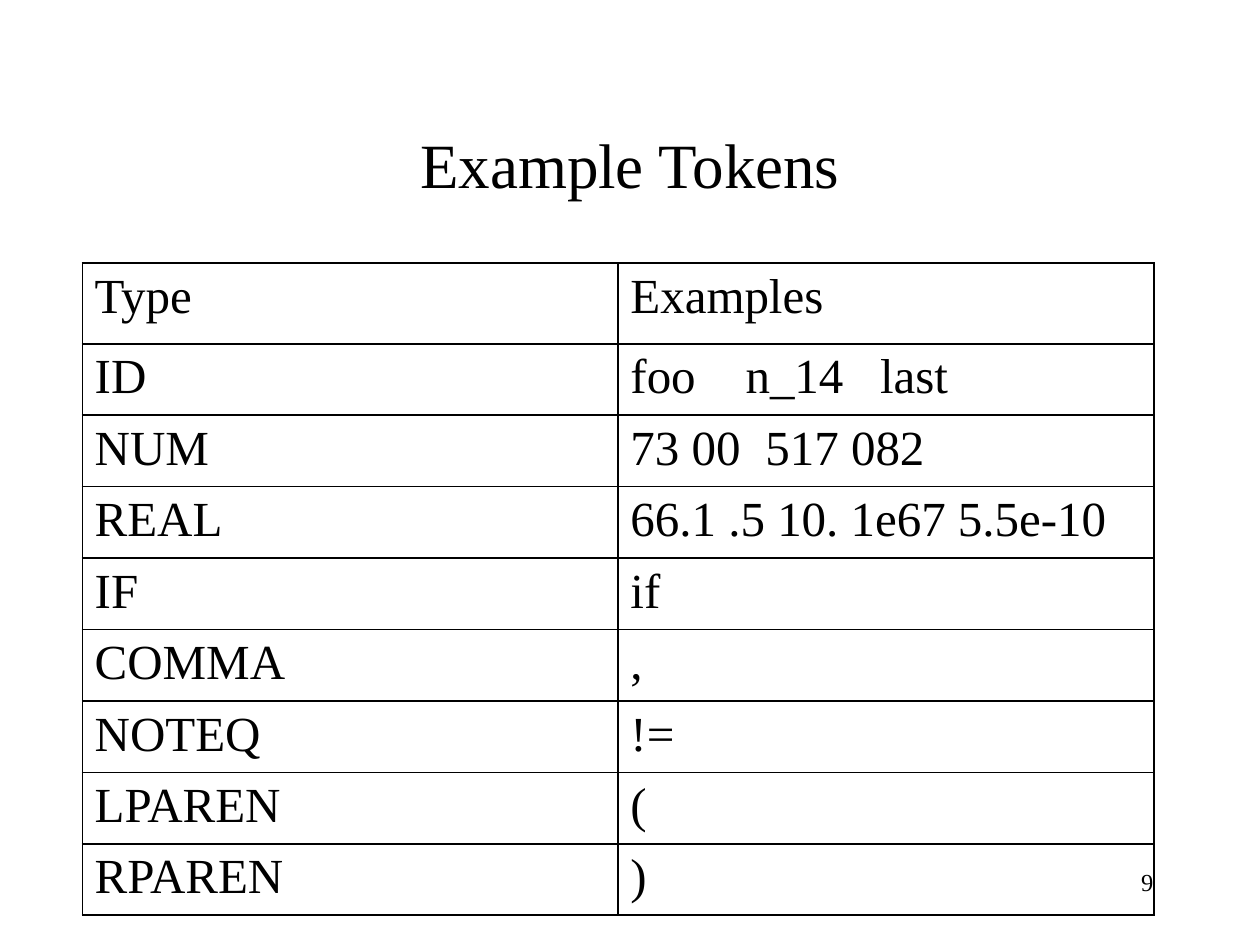
from dataclasses import dataclass

from lxml import etree
from pptx import Presentation
from pptx.dml.color import RGBColor
from pptx.enum.text import MSO_ANCHOR, PP_ALIGN
from pptx.oxml.ns import qn
from pptx.util import Cm, Pt

TITLE_ONLY = 5
CENTER, LEFT, RIGHT = PP_ALIGN.CENTER, PP_ALIGN.LEFT, PP_ALIGN.RIGHT
MIDDLE, TOP = MSO_ANCHOR.MIDDLE, MSO_ANCHOR.TOP
FONT = "Times New Roman"
BLACK = "000000"
HEADER_HEIGHT, TOKEN_HEIGHT = Cm(1.63), Cm(1.44)
COLUMN_WIDTH = Cm(10.8)


@dataclass(frozen=True)
class TokenRow:
    kind: str
    examples: str
    tabs: tuple[float, ...] = ()


TOKENS = [
    TokenRow("Type", "Examples"),
    TokenRow("ID", "foo\tn_14\tlast", (2.32, 5.03)),
    TokenRow("NUM", "73 00\t517 082", (2.72,)),
    TokenRow("REAL", "66.1 .5 10. 1e67 5.5e-10"),
    TokenRow("IF", "if"),
    TokenRow("COMMA", ","),
    TokenRow("NOTEQ", "!="),
    TokenRow("LPAREN", "("),
    TokenRow("RPAREN", ")"),
]


def color(value: str) -> RGBColor:
    return RGBColor.from_string(value)


def write(paragraph, text: str, size: int, align) -> None:
    paragraph.alignment = align
    run = paragraph.add_run()
    run.text = text
    run.font.size = Pt(size)
    run.font.name = FONT
    run.font.bold = False
    run.font.color.rgb = color(BLACK)


def add_tabs(paragraph, stops: tuple[float, ...]) -> None:
    tab_list = etree.SubElement(paragraph._p.get_or_add_pPr(), qn("a:tabLst"))
    for stop in stops:
        etree.SubElement(tab_list, qn("a:tab"), pos=str(int(Cm(stop))), algn="l")


def add_borders(cell) -> None:
    properties = cell._tc.get_or_add_tcPr()
    for position, side in enumerate(("lnL", "lnR", "lnT", "lnB")):
        line = etree.Element(qn(f"a:{side}"), w=str(int(Pt(1))))
        fill = etree.SubElement(line, qn("a:solidFill"))
        etree.SubElement(fill, qn("a:srgbClr"), val=BLACK)
        properties.insert(position, line)


def fill_cell(cell, text: str, tabs: tuple[float, ...] = ()) -> None:
    cell.fill.background()
    cell.vertical_anchor = TOP
    cell.margin_left = cell.margin_right = Cm(0.25)
    cell.margin_top = cell.margin_bottom = Cm(0.13)
    add_borders(cell)
    paragraph = cell.text_frame.paragraphs[0]
    write(paragraph, text, 28, LEFT)
    paragraph.space_before = Pt(5.6)
    if tabs:
        add_tabs(paragraph, tabs)


def add_title(slide, text: str) -> None:
    title = slide.shapes.title
    title.left, title.top = Cm(1.9), Cm(1.7)
    title.width, title.height = Cm(21.6), Cm(3.18)
    title.text_frame.vertical_anchor = MIDDLE
    write(title.text_frame.paragraphs[0], text, 36, CENTER)


def add_token_table(slide, tokens: list[TokenRow]) -> None:
    height = HEADER_HEIGHT + TOKEN_HEIGHT * (len(tokens) - 1)
    table = slide.shapes.add_table(
        len(tokens), 2, Cm(1.66), Cm(5.3), COLUMN_WIDTH * 2, height
    ).table
    table.first_row = False
    table.horz_banding = False
    for column in table.columns:
        column.width = COLUMN_WIDTH
    for index, token in enumerate(tokens):
        table.rows[index].height = TOKEN_HEIGHT if index else HEADER_HEIGHT
        fill_cell(table.cell(index, 0), token.kind)
        fill_cell(table.cell(index, 1), token.examples, token.tabs)


def add_page_number(slide, number: str) -> None:
    page = slide.shapes.add_textbox(Cm(18.2), Cm(17.35), Cm(5.3), Cm(1.27))
    page.text_frame.word_wrap = True
    write(page.text_frame.paragraphs[0], number, 14, RIGHT)


def main() -> None:
    deck = Presentation()
    deck.slide_width, deck.slide_height = Cm(25.4), Cm(19.05)
    slide = deck.slides.add_slide(deck.slide_layouts[TITLE_ONLY])
    add_title(slide, "Example Tokens")
    add_token_table(slide, TOKENS)
    add_page_number(slide, "9")
    deck.save("out.pptx")


if __name__ == "__main__":
    main()
